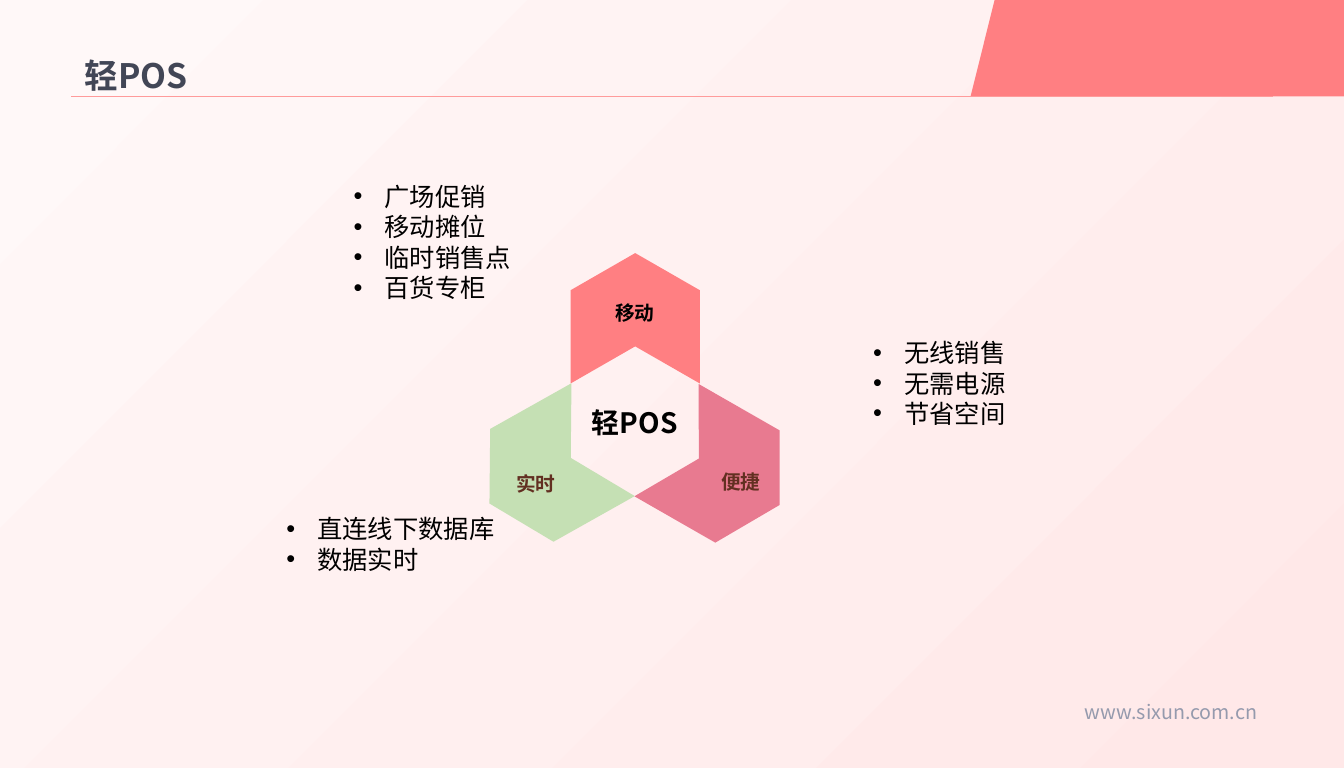
import pptx
import pptx.dml.color
import pptx.enum.shapes
import pptx.enum.text
import pptx.oxml.ns
import pptx.util
from lxml import etree

Pt = pptx.util.Pt
RGBColor = pptx.dml.color.RGBColor
SHAPE = pptx.enum.shapes.MSO_SHAPE
ALIGN = pptx.enum.text.PP_ALIGN
ANCHOR = pptx.enum.text.MSO_ANCHOR
FIT = pptx.enum.text.MSO_AUTO_SIZE
qn = pptx.oxml.ns.qn

BLACK = RGBColor(0x00, 0x00, 0x00)
BROWN = RGBColor(0x62, 0x2F, 0x21)
SLATE = RGBColor(0x42, 0x46, 0x56)
GREY = RGBColor(0x95, 0x9A, 0xAD)
CORAL = RGBColor(0xFF, 0x7F, 0x82)
RULE = RGBColor(0xFF, 0x9B, 0x9B)
GREEN = RGBColor(0xC5, 0xE0, 0xB4)
ROSE = RGBColor(0xE8, 0x7A, 0x90)
PALE = RGBColor(0xFF, 0xF8, 0xF8)
BLUSH = RGBColor(0xFF, 0xE8, 0xE8)


class SlideBuilder:
    """Draws styled elements on one slide, with all lengths in points."""

    heading_font = "Noto Sans CJK SC"
    list_font = "Cabin"
    list_indent = 21.6

    def __init__(self, slide):
        self.slide = slide

    def background(self, start, end):
        fill = self.slide.background.fill
        fill.gradient()
        fill.gradient_angle = 315
        for stop, color in zip(fill.gradient_stops, (start, end)):
            stop.color.rgb = color

    def format_runs(self, paragraph, font, size, color, bold=False):
        for run in paragraph.runs:
            run.font.name = font
            run.font.size = Pt(size)
            run.font.bold = bold
            run.font.color.rgb = color
            east_asian = etree.Element(qn("a:ea"), typeface=font)
            run.font._element.find(qn("a:latin")).addnext(east_asian)

    def title(self, text, left, top, width, height):
        title = self.slide.shapes.title
        title.left, title.top = Pt(left), Pt(top)
        title.width, title.height = Pt(width), Pt(height)
        frame = title.text_frame
        frame.text = text
        frame.word_wrap = False
        frame.auto_size = FIT.NONE
        frame.vertical_anchor = ANCHOR.BOTTOM
        paragraph = frame.paragraphs[0]
        paragraph.alignment = ALIGN.LEFT
        paragraph.line_spacing = 2.0
        paragraph.space_before = Pt(0)
        self.format_runs(paragraph, self.heading_font, 23.4, SLATE, True)

    def shape(self, preset, left, top, width, height, color, rotation=0, adjustment=None):
        shape = self.slide.shapes.add_shape(preset, Pt(left), Pt(top), Pt(width), Pt(height))
        shape.shadow.inherit = False
        shape.fill.solid()
        shape.fill.fore_color.rgb = color
        shape.line.fill.background()
        shape.rotation = rotation
        if adjustment is not None:
            shape.adjustments[0] = adjustment

    def rule(self, left, right, y, color, weight):
        rule = self.slide.shapes.add_connector(
            pptx.enum.shapes.MSO_CONNECTOR.STRAIGHT, Pt(left), Pt(y), Pt(right), Pt(y))
        rule.line.color.rgb = color
        rule.line.width = Pt(weight)
        etree.SubElement(rule._element.spPr, qn("a:effectLst"))

    def text_frame(self, text, left, top, width, height, wrap):
        box = self.slide.shapes.add_textbox(Pt(left), Pt(top), Pt(width), Pt(height))
        frame = box.text_frame
        frame.text = text
        frame.word_wrap = wrap
        frame.auto_size = FIT.SHAPE_TO_FIT_TEXT
        return frame

    def label(self, text, left, top, width, height, size, color, bold=True, align=ALIGN.CENTER):
        paragraph = self.text_frame(text, left, top, width, height, True).paragraphs[0]
        paragraph.alignment = align
        self.format_runs(paragraph, self.heading_font, size, color, bold)

    def bullets(self, items, left, top, width, height):
        frame = self.text_frame("\n".join(items), left, top, width, height, False)
        for paragraph in frame.paragraphs:
            properties = paragraph._p.get_or_add_pPr()
            properties.set("marL", str(Pt(self.list_indent)))
            properties.set("indent", str(-Pt(self.list_indent)))
            etree.SubElement(properties, qn("a:buFont"), typeface="Arial")
            etree.SubElement(properties, qn("a:buChar"), char="•")
            self.format_runs(paragraph, self.list_font, 17.6, BLACK)


def main():
    deck = pptx.Presentation()
    deck.slide_width, deck.slide_height = Pt(935.3), Pt(534.2)
    builder = SlideBuilder(deck.slides.add_slide(deck.slide_layouts[5]))

    builder.background(PALE, BLUSH)
    builder.shape(SHAPE.PARALLELOGRAM, 675.4, 0, 281.5, 67, CORAL)
    builder.label("www.sixun.com.cn", 727.2, 483.1, 154.8, 23.8, 13.7, GREY, False, ALIGN.RIGHT)
    builder.rule(49.7, 885.6, 67, RULE, 0.5)
    builder.title("轻POS", 51.8, 24.5, 331.9, 45.4)

    for left, top, rotation, color in (
        (334.8, 283, 150.7, GREEN),
        (396.7, 176.4, 270, CORAL),
        (457.9, 283.7, 29.8, ROSE),
    ):
        builder.shape(SHAPE.CHEVRON, left, top, 90.7, 90, color, rotation, 0.287)

    builder.label("轻POS", 396.7, 278.6, 90, 31, 19.5, BLACK)
    for feature, left, top, width, color in (
        ("移动", 392.4, 205.9, 98.6, BLACK),
        ("实时", 344.9, 324.7, 56.2, BROWN),
        ("便捷", 487.4, 323.3, 56.2, BROWN),
    ):
        builder.label(feature, left, top, width, 23.8, 13.7, color)

    for benefits, left, top, width, height in (
        (("广场促销", "移动摊位", "临时销售点", "百货专柜"), 239, 122.4, 124.6, 92.2),
        (("无线销售", "无需电源", "节省空间"), 600.5, 231.1, 107.3, 70.6),
        (("直连线下数据库", "数据实时"), 192.2, 353.5, 160.6, 49.7),
    ):
        builder.bullets(benefits, left, top, width, height)

    deck.save("out.pptx")


if __name__ == "__main__":
    main()
